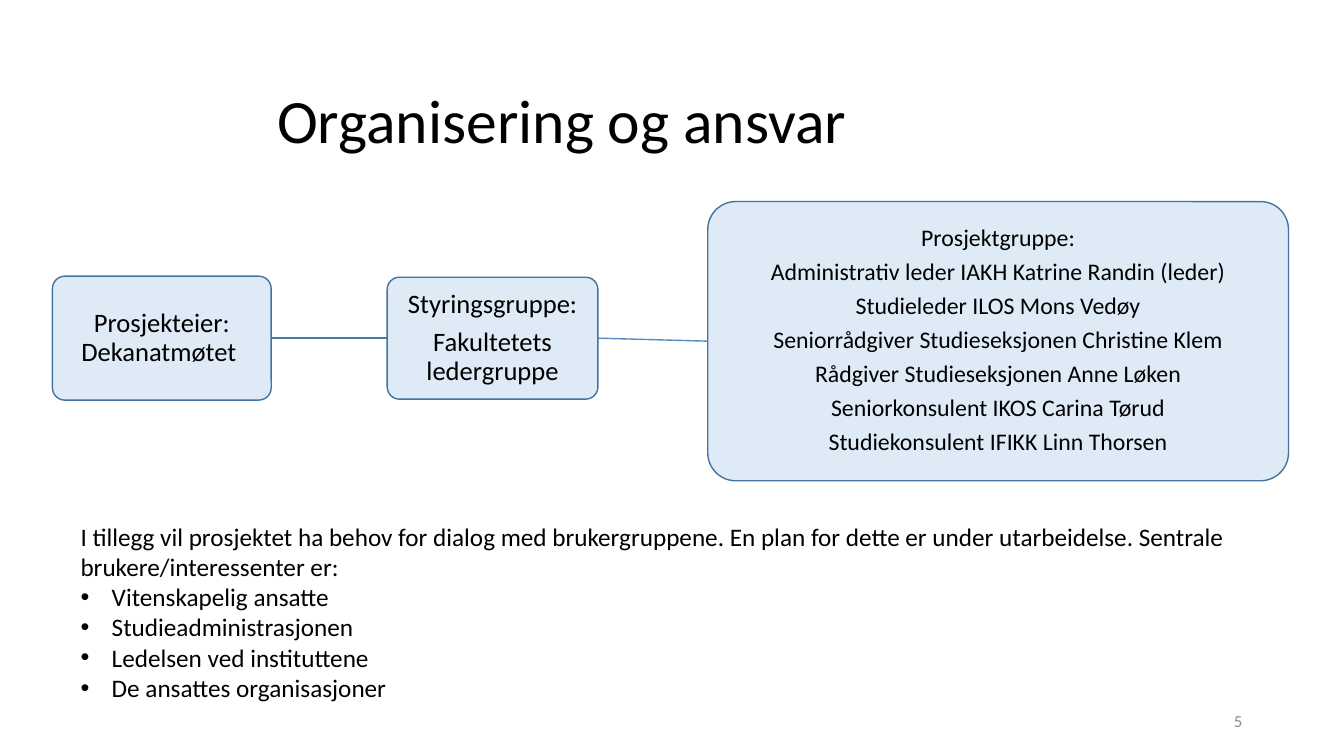
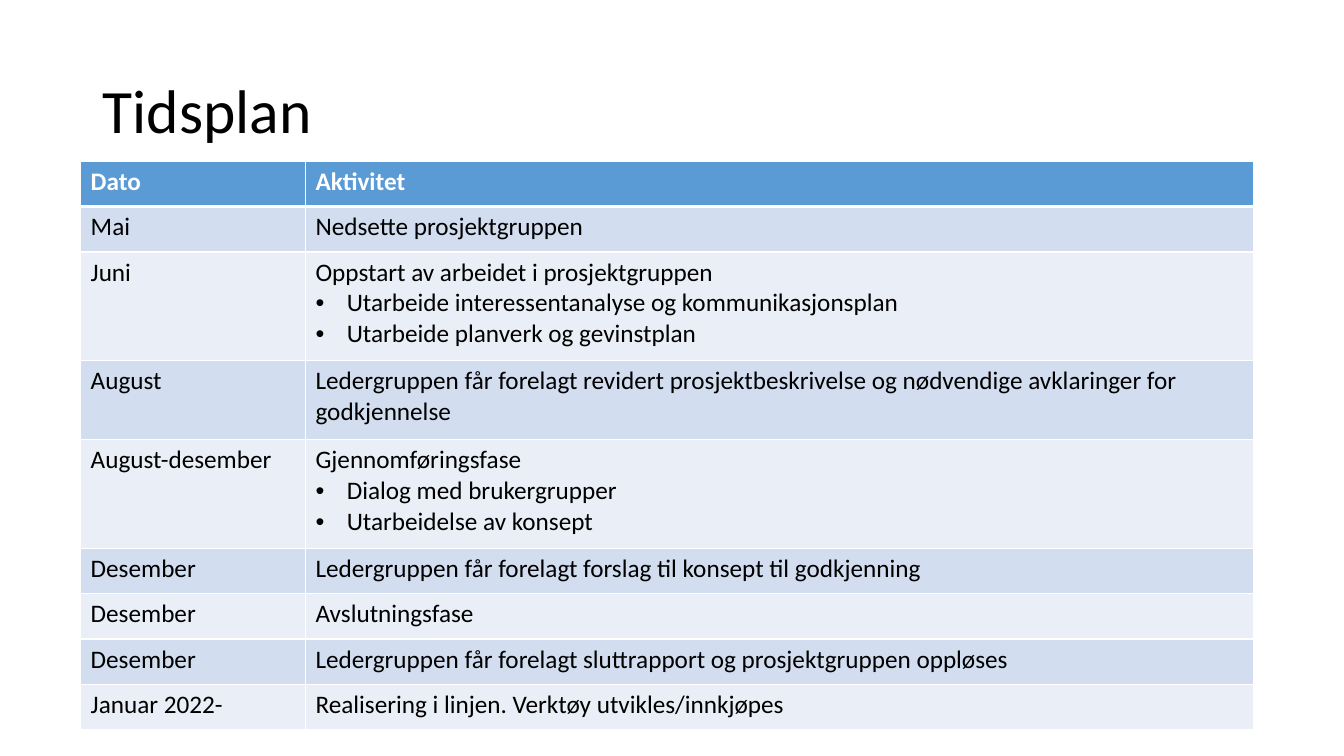
from lxml import etree
from pptx import Presentation
from pptx import util as u
from pptx.dml.color import RGBColor
from pptx.enum import shapes, text
from pptx.oxml.ns import qn

# Shared style
FONT = "Calibri"
BLACK = RGBColor(0x00, 0x00, 0x00)
WHITE = RGBColor(0xFF, 0xFF, 0xFF)
GREY = RGBColor(0x8C, 0x8C, 0x8C)
BOX_FILL = RGBColor(0xDE, 0xEB, 0xF7)
BOX_LINE = RGBColor(0x43, 0x73, 0x9E)
HEADER_FILL = RGBColor(0x5B, 0x9B, 0xD5)
BAND_FILLS = RGBColor(0xD2, 0xDE, 0xEF), RGBColor(0xEA, 0xEF, 0xF7)
BULLET = "• "
BULLET_INDENT = u.Inches(0.31)
BODY_SIZE = 18

# Slide 1: boxes as (left, top, width, height), size, paragraphs
GROUPS = [
    ((0.52, 2.74, 2.17, 1.23), 19, ["Prosjekteier: Dekanatmøtet "]),
    ((3.84, 2.75, 2.09, 1.21), 19, ["Styringsgruppe:", "Fakultetets ledergruppe"]),
    ((7.02, 2.0, 5.76, 2.77), 17, [
        "Prosjektgruppe:",
        "Administrativ leder IAKH Katrine Randin (leder)",
        "Studieleder ILOS Mons Vedøy",
        "Seniorrådgiver Studieseksjonen Christine Klem",
        "Rådgiver Studieseksjonen Anne Løken",
        "Seniorkonsulent IKOS Carina Tørud",
        "Studiekonsulent IFIKK Linn Thorsen",
    ]),
]
LINK_COLORS = RGBColor(0x49, 0x7C, 0xAB), RGBColor(0x53, 0x8D, 0xC1)
STAKEHOLDERS = [
    "I tillegg vil prosjektet ha behov for dialog med brukergruppene. En plan for "
    "dette er under utarbeidelse. Sentrale brukere/interessenter er:",
    "• Vitenskapelig ansatte",
    "• Studieadministrasjonen",
    "• Ledelsen ved instituttene",
    "• De ansattes organisasjoner",
]

# Slide 2: row height, date, activity paragraphs
SCHEDULE = [
    (0.45, "Dato", ["Aktivitet"]),
    (0.45, "Mai", ["Nedsette prosjektgruppen"]),
    (1.08, "Juni", ["Oppstart av arbeidet i prosjektgruppen",
                    "• Utarbeide interessentanalyse og kommunikasjonsplan",
                    "• Utarbeide planverk og gevinstplan"]),
    (0.78, "August", ["Ledergruppen får forelagt revidert prosjektbeskrivelse og "
                      "nødvendige avklaringer for godkjennelse"]),
    (1.08, "August-desember", ["Gjennomføringsfase",
                               "• Dialog med brukergrupper",
                               "• Utarbeidelse av konsept"]),
    (0.45, "Desember", ["Ledergruppen får forelagt forslag til konsept til godkjenning"]),
    (0.45, "Desember", ["Avslutningsfase"]),
    (0.45, "Desember", ["Ledergruppen får forelagt sluttrapport og prosjektgruppen oppløses"]),
    (0.45, "Januar 2022-", ["Realisering i linjen. Verktøy utvikles/innkjøpes"]),
]
COLUMN_WIDTHS = 2.23, 9.4


def inches(values):
    return [u.Inches(value) for value in values]


def add_bullet(paragraph):
    properties = paragraph._p.get_or_add_pPr()
    properties.set("marL", str(BULLET_INDENT))
    properties.set("indent", str(-BULLET_INDENT))
    etree.SubElement(properties, qn("a:buFont"), typeface="Arial")
    etree.SubElement(properties, qn("a:buChar"), char=BULLET.strip())


def write(frame, lines, size, color=BLACK, bold=False, align=text.PP_ALIGN.LEFT,
          line_spacing=None, space_after=None):
    for index, line in enumerate(lines):
        paragraph = frame.add_paragraph() if index else frame.paragraphs[0]
        if line.startswith(BULLET):
            add_bullet(paragraph)
        paragraph.text = line.removeprefix(BULLET)
        paragraph.alignment = align
        paragraph.line_spacing = line_spacing
        paragraph.space_after = space_after
        font = paragraph.font
        font.name, font.size, font.bold = FONT, u.Pt(size), bold
        font.color.rgb = color


def add_text(slide, place, lines, size, anchor=text.MSO_ANCHOR.MIDDLE, **style):
    frame = slide.shapes.add_textbox(*inches(place)).text_frame
    frame.word_wrap = True
    frame.vertical_anchor = anchor
    write(frame, lines, size, **style)
    return frame


def add_title(slide, title, place):
    add_text(slide, place, [title], 44, line_spacing=0.9)


def add_group_box(slide, place, size, lines):
    box = slide.shapes.add_shape(shapes.MSO_SHAPE.ROUNDED_RECTANGLE, *inches(place))
    box.adjustments[0] = 0.1
    box.shadow.inherit = False
    box.fill.solid()
    box.fill.fore_color.rgb = BOX_FILL
    box.line.color.rgb = BOX_LINE
    box.line.width = u.Pt(1)
    frame = box.text_frame
    frame.word_wrap = True
    frame.vertical_anchor = text.MSO_ANCHOR.MIDDLE
    frame.margin_left = frame.margin_right = u.Inches(0.01)
    frame.margin_top = frame.margin_bottom = u.Inches(0.01)
    write(frame, lines, size, align=text.PP_ALIGN.CENTER, line_spacing=0.9,
          space_after=u.Pt(round(size * 0.35, 1)))
    return box


def link(slide, start, end, color):
    connector = slide.shapes.add_connector(shapes.MSO_CONNECTOR.STRAIGHT, 0, 0, 0, 0)
    connector.begin_connect(start, 3)
    connector.end_connect(end, 1)
    connector.line.color.rgb = color
    connector.line.width = u.Pt(1)
    etree.SubElement(connector._element.spPr, qn("a:effectLst"))


def style_cell(cell, fill, top, bottom):
    # Borders come before the fill in the cell properties
    properties = cell._tc.get_or_add_tcPr()
    for side, width in (("L", 1), ("R", 1), ("T", top), ("B", bottom)):
        border = etree.SubElement(properties, qn(f"a:ln{side}"), w=str(u.Pt(width)))
        solid = etree.SubElement(border, qn("a:solidFill"))
        etree.SubElement(solid, qn("a:srgbClr"), val=str(WHITE))
    cell.fill.solid()
    cell.fill.fore_color.rgb = fill


def build_organisation(slide):
    add_title(slide, "Organisering og ansvar", (2.65, 0.6, 8.42, 1.25))
    boxes = [add_group_box(slide, *group) for group in GROUPS]
    for start, end, color in zip(boxes, boxes[1:], LINK_COLORS):
        link(slide, start, end, color)
    # Slide number and stakeholders
    add_text(slide, (9.42, 6.95, 3, 0.4), ["5"], 12, color=GREY, align=text.PP_ALIGN.RIGHT)
    frame = add_text(slide, (0.7, 5.12, 11.72, 1.92), STAKEHOLDERS, BODY_SIZE,
                     anchor=text.MSO_ANCHOR.TOP)
    frame.auto_size = text.MSO_AUTO_SIZE.SHAPE_TO_FIT_TEXT


def build_schedule(slide):
    add_title(slide, "Tidsplan", (0.92, 0.4, 11.5, 1.45))
    height = sum(row[0] for row in SCHEDULE)
    place = inches((0.8, 1.6, sum(COLUMN_WIDTHS), height))
    table = slide.shapes.add_table(len(SCHEDULE), len(COLUMN_WIDTHS), *place).table
    table.horz_banding = False
    for column, width in zip(table.columns, COLUMN_WIDTHS):
        column.width = u.Inches(width)
    for index, (row_height, date, activity) in enumerate(SCHEDULE):
        table.rows[index].height = u.Inches(row_height)
        header = index == 0
        fill = HEADER_FILL if header else BAND_FILLS[(index - 1) % 2]
        for cell, lines in zip(table.rows[index].cells, ([date], activity)):
            style_cell(cell, fill, top=3 if index == 1 else 1, bottom=3 if header else 1)
            write(cell.text_frame, lines, BODY_SIZE, WHITE if header else BLACK, header)


def main():
    presentation = Presentation()
    presentation.slide_width, presentation.slide_height = inches((13.33, 7.5))
    blank = presentation.slide_layouts[6]
    for build in (build_organisation, build_schedule):
        build(presentation.slides.add_slide(blank))
    presentation.save("out.pptx")


if __name__ == "__main__":
    main()
